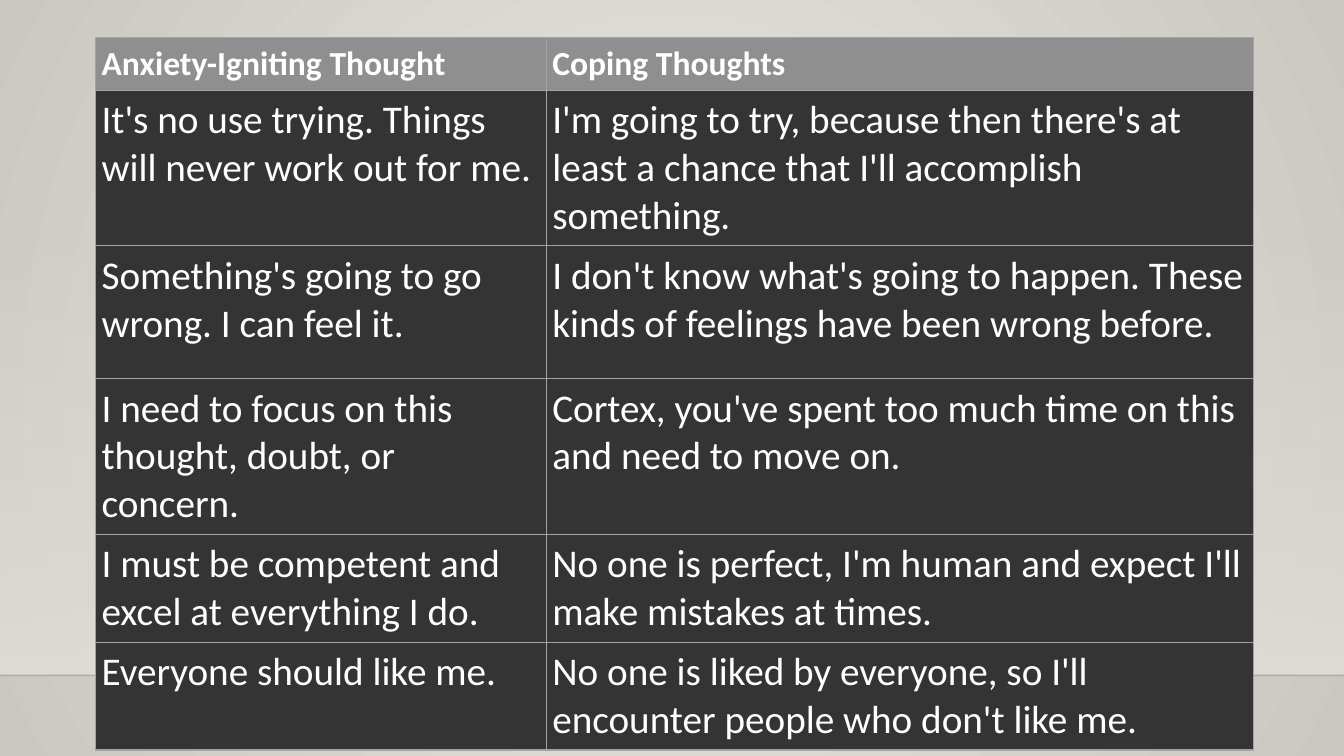
"""Build a slide that pairs anxious thoughts with coping thoughts."""
from dataclasses import dataclass

from lxml.etree import SubElement as Sub
from pptx import Presentation
from pptx.dml.color import RGBColor as RGB
from pptx.enum.shapes import MSO_CONNECTOR as Conn, MSO_SHAPE as Shape
from pptx.oxml.ns import qn
from pptx.util import Cm, Pt

ROWS = [
    ("Anxiety-Igniting Thought", "Coping Thoughts"),
    ("It's no use trying. Things will never work out for me.",
     "I'm going to try, because then there's at least a chance that I'll accomplish something."),
    ("Something's going to go wrong. I can feel it.",
     "I don't know what's going to happen. These kinds of feelings have been wrong before."),
    ("I need to focus on this thought, doubt, or concern.",
     "Cortex, you've spent too much time on this and need to move on."),
    ("I must be competent and excel at everything I do.",
     "No one is perfect, I'm human and expect I'll make mistakes at times."),
    ("Everyone should like me.",
     "No one is liked by everyone, so I'll encounter people who don't like me."),
]
WIDE, TALL = 33.87, 19.05
LEFT, TOP = 2.41, 0.94
COLS = [11.36, 17.83]
HIGH = [1.24, 3.66, 3.35, 3.66, 2.54, 2.54]
WALL, FLOOR = 5.61, 17.02
PAD = 0.15


@dataclass(frozen=True)
class Theme:
    """Hold the colours, font and type sizes."""
    font: str = "Calibri"
    head: int = 24
    body: int = 28
    text: str = "FFFFFF"
    bar: str = "8F8F8F"
    cell: str = "343434"
    rule: str = "A3A3A3"
    edge: str = "000001"
    glow: str = "DFDBD5"
    back: tuple = ("ECEAE7", "CAC7C1")


LOOK = Theme()


def hue(code):
    """Turn a hex code into a colour."""
    return RGB.from_string(code)


def blend(fill, codes):
    """Set a two-stop gradient."""
    fill.gradient()
    for stop, code, spot in zip(fill.gradient_stops, codes, (0, 1)):
        stop.color.rgb = hue(code)
        stop.position = spot


def fade(tint, part):
    """Set the opacity of a colour element in percent."""
    Sub(tint, qn("a:alpha"), val=str(part * 1000))


def paint(slide):
    """Draw the round backdrop, the wall glow and the floor line."""
    blend(slide.background.fill, LOOK.back)
    lin = slide.element.xpath(".//p:bgPr//a:lin")[0]
    grad = lin.getparent()
    grad.remove(lin)
    ring = Sub(grad, qn("a:path"), path="circle")
    Sub(ring, qn("a:fillToRect"), {side: "50000" for side in "ltrb"})

    wall = slide.shapes.add_shape(Shape.RECTANGLE, 0, Cm(WALL), Cm(WIDE), Cm(FLOOR - WALL))
    wall.shadow.inherit = False
    wall.line.fill.background()
    blend(wall.fill, (LOOK.glow, LOOK.glow))
    wall.fill.gradient_angle = 270
    fade(wall.element.xpath(".//a:gs/a:srgbClr")[0], 0)

    edge = slide.shapes.add_connector(Conn.STRAIGHT, 0, Cm(FLOOR), Cm(WIDE), Cm(FLOOR))
    edge.line.width = Pt(1)
    edge.line.color.rgb = hue(LOOK.edge)
    fade(edge.element.xpath(".//a:ln//a:srgbClr")[0], 20)
    Sub(edge.element.spPr, qn("a:effectLst"))


def border(cell):
    """Rule all four sides of a cell."""
    prop = cell._tc.get_or_add_tcPr()
    for side in ("lnL", "lnR", "lnT", "lnB"):
        line = Sub(prop, qn("a:" + side), w=str(Pt(1)))
        Sub(Sub(line, qn("a:solidFill")), qn("a:srgbClr"), val=LOOK.rule)


def write(cell, words, head):
    """Fill and format one cell."""
    cell.margin_left = cell.margin_right = Cm(PAD)
    cell.margin_top = cell.margin_bottom = Cm(PAD)
    border(cell)
    cell.fill.solid()
    cell.fill.fore_color.rgb = hue(LOOK.bar if head else LOOK.cell)
    run = cell.text_frame.paragraphs[0].add_run()
    run.text = words
    run.font.name = LOOK.font
    run.font.size = Pt(LOOK.head if head else LOOK.body)
    run.font.bold = head
    run.font.color.rgb = hue(LOOK.text)


def chart(slide):
    """Lay out the table of thoughts."""
    grid = slide.shapes.add_table(len(ROWS), len(COLS), Cm(LEFT), Cm(TOP),
                                  Cm(sum(COLS)), Cm(sum(HIGH))).table
    grid.horz_banding = False
    for col, wide in zip(grid.columns, COLS):
        col.width = Cm(wide)
    for row, high in zip(grid.rows, HIGH):
        row.height = Cm(high)
    for r, pair in enumerate(ROWS):
        for c, words in enumerate(pair):
            write(grid.cell(r, c), words, r == 0)


def main():
    """Build and save the deck."""
    deck = Presentation()
    deck.slide_width, deck.slide_height = Cm(WIDE), Cm(TALL)
    slide = deck.slides.add_slide(deck.slide_layouts[6])
    paint(slide)
    chart(slide)
    deck.save("out.pptx")


if __name__ == "__main__":
    main()
